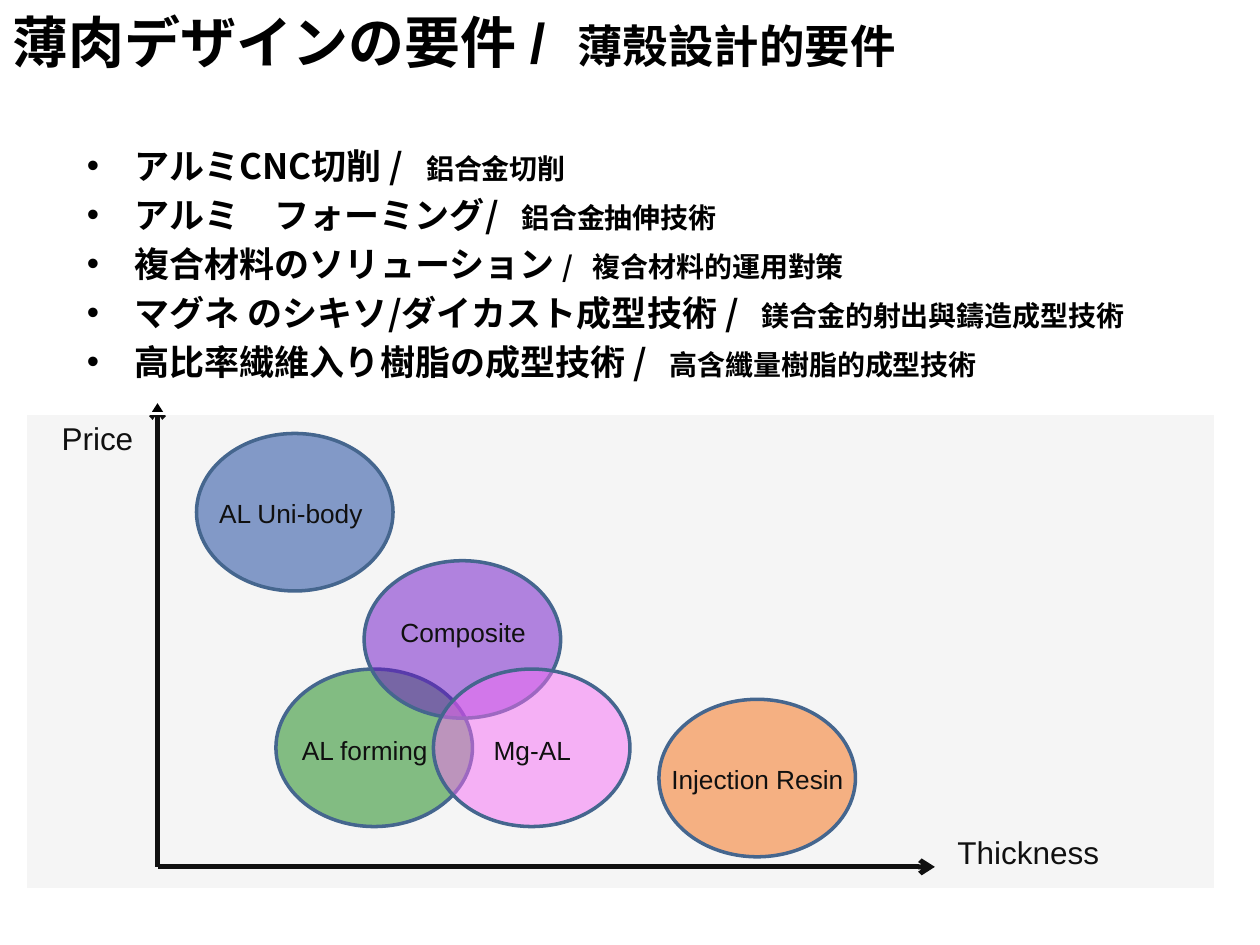
import pptx
import pptx.util
import pptx.dml.color
import pptx.enum.shapes
import pptx.enum.text
import pptx.oxml
import pptx.oxml.ns

Inches = pptx.util.Inches
Pt = pptx.util.Pt
RGBColor = pptx.dml.color.RGBColor
SHAPE = pptx.enum.shapes.MSO_SHAPE
ALIGN = pptx.enum.text.PP_ALIGN

BLACK = RGBColor(0, 0, 0)
WHITE = RGBColor(255, 255, 255)
GRAY = RGBColor(0xA6, 0xA6, 0xA6)
EDGE = RGBColor(0x3A, 0x5F, 0x8C)
BLUE = RGBColor(0x00, 0x33, 0x99)
GREEN = RGBColor(0x00, 0x80, 0x00)
PURPLE = RGBColor(0x66, 0x00, 0xCC)
PINK = RGBColor(0xFF, 0x66, 0xFF)
ORANGE = RGBColor(0xFF, 0x66, 0x00)
GOTHIC = "Noto Sans CJK JP"
HAN = "Noto Sans CJK SC"
GAP = "　"

ITEMS = [
    ("アルミCNC切削 /", 20, 13, "鋁合金切削"),
    ("アルミ　フォーミング/", 20, 13, "鋁合金抽伸技術"),
    ("複合材料のソリューション /", 16, 11, "複合材料的運用對策"),
    ("マグネ のシキソ/ダイカスト成型技術 /", 20, 13,
     "鎂合金的射出與鑄造成型技術"),
    ("高比率繊維入り樹脂の成型技術 /", 20, 13, "高含纖量樹脂的成型技術"),
]
BLOBS = [
    (1.36, 0.16, BLUE), (1.99, 2.03, GREEN), (2.69, 1.17, PURPLE),
    (3.24, 2.03, PINK), (5.03, 2.27, ORANGE),
]
LABELS = [
    ("Price", 0.19, 0, 0.78, 18, ALIGN.LEFT),
    ("Thickness", 7.3, 3.28, 1.72, 18, ALIGN.LEFT),
    ("AL Uni-body", 1.44, 0.62, 1.41, 15, ALIGN.LEFT),
    ("Composite", 2.77, 1.56, 1.41, 15, ALIGN.CENTER),
    ("AL forming", 1.99, 2.5, 1.41, 15, ALIGN.CENTER),
    ("Mg-AL", 3.32, 2.5, 1.41, 15, ALIGN.CENTER),
    ("Injection Resin", 5.03, 2.73, 1.64, 15, ALIGN.LEFT),
]


def add_node(parent, tag, **attrs):
    """Append a DrawingML element with the given attributes."""
    node = pptx.oxml.parse_xml(f"<a:{tag} {pptx.oxml.ns.nsdecls('a')}/>")
    for key, value in attrs.items():
        node.set(key, value)
    parent.append(node)
    return node


def add_text(para, text, size=15, font="Arial", east=None, bold=False):
    """Add one formatted run to a paragraph."""
    run = para.add_run()
    run.text = text
    run.font.size = Pt(size)
    run.font.bold = bold
    run.font.name = font
    run.font.color.rgb = BLACK
    add_node(run.font._element, "ea", typeface=east or font)


def add_frame(slide, left, top, width, height):
    """Add a wrapping text box and return its frame."""
    box = slide.shapes.add_textbox(
        Inches(left), Inches(top), Inches(width), Inches(height))
    box.text_frame.word_wrap = True
    return box.text_frame


def add_shape(slide, kind, left, top, width, height, fill, line, alpha):
    """Add an outlined shape with a see-through fill."""
    shape = slide.shapes.add_shape(
        kind, Inches(left), Inches(top), Inches(width), Inches(height))
    shape.shadow.inherit = False
    shape.fill.solid()
    shape.fill.fore_color.rgb = fill
    color = shape._element.spPr.find(".//" + pptx.oxml.ns.qn("a:srgbClr"))
    add_node(color, "alpha", val=str(alpha * 1000))
    shape.line.color.rgb = line
    shape.line.width = Pt(2)


def add_axis(slide, left, top, right, end):
    """Add a black axis with an arrow at its end."""
    axis = slide.shapes.add_connector(
        pptx.enum.shapes.MSO_CONNECTOR.STRAIGHT,
        Inches(left), Inches(top), Inches(right), Inches(end))
    axis.line.color.rgb = BLACK
    axis.line.width = Pt(2.75)
    add_node(axis.line._get_or_add_ln(), "tailEnd", type="arrow")
    add_node(axis._element.spPr, "effectLst")


def set_title(slide, left, top, width, height):
    """Place and fill the title."""
    title = slide.shapes.title
    title.left, title.top = Inches(left), Inches(top)
    title.width, title.height = Inches(width), Inches(height)
    frame = title.text_frame
    frame.vertical_anchor = pptx.enum.text.MSO_ANCHOR.TOP
    frame.auto_size = pptx.enum.text.MSO_AUTO_SIZE.NONE
    para = frame.paragraphs[0]
    para.alignment = ALIGN.LEFT
    add_text(para, "薄肉デザインの要件 /", size=32, east=GOTHIC, bold=True)
    add_text(para, GAP, size=18, font=HAN, bold=True)
    add_text(para, "薄殼設計的要件", size=26, font=HAN, bold=True)


def add_list(slide, left, top, width, height):
    """Add the bulleted list of techniques."""
    frame = add_frame(slide, left, top, width, height)
    for i, (main, slash, gap, sub) in enumerate(ITEMS):
        para = frame.add_paragraph() if i else frame.paragraphs[0]
        props = para._p.get_or_add_pPr()
        props.set("marL", str(Inches(0.38)))
        props.set("indent", str(-Inches(0.38)))
        add_node(props, "buFont", typeface="Arial")
        add_node(props, "buChar", char="•")
        para.space_before = Pt(4 if i else 0)
        parts = [(main[:-1], 20), ("/", slash), (GAP, gap), (sub, 16)]
        for text, size in parts:
            add_text(para, text, size=size, font=GOTHIC, bold=True)


def add_plot(slide, left, top, width, height):
    """Add the price and thickness map."""
    base_x, base_y = left + 1.05, top + 3.6
    add_axis(slide, base_x, base_y, base_x, top - 0.08)
    add_axis(slide, base_x, base_y, left + 7.22, base_y)
    for x, y, color in BLOBS:
        add_shape(slide, SHAPE.OVAL, left + x, top + y, 1.56, 1.25,
                  color, EDGE, 50)
    for text, x, y, wide, size, align in LABELS:
        frame = add_frame(slide, left + x, top + y, wide, 0.4)
        para = frame.paragraphs[0]
        para.alignment = align
        add_text(para, text, size=size)
    add_shape(slide, SHAPE.RECTANGLE, left, top, width, height,
              GRAY, WHITE, 10)


def main():
    """Build and save the slide."""
    deck = pptx.Presentation()
    deck.slide_width, deck.slide_height = Inches(10), Inches(7.5)
    slide = deck.slides.add_slide(deck.slide_layouts[5])
    set_title(slide, 0, 0.01, 7.99, 0.84)
    add_list(slide, 0.59, 1.1, 9.41, 1.95)
    add_plot(slide, 0.2, 3.28, 9.45, 3.78)
    deck.save("out.pptx")


if __name__ == "__main__":
    main()
